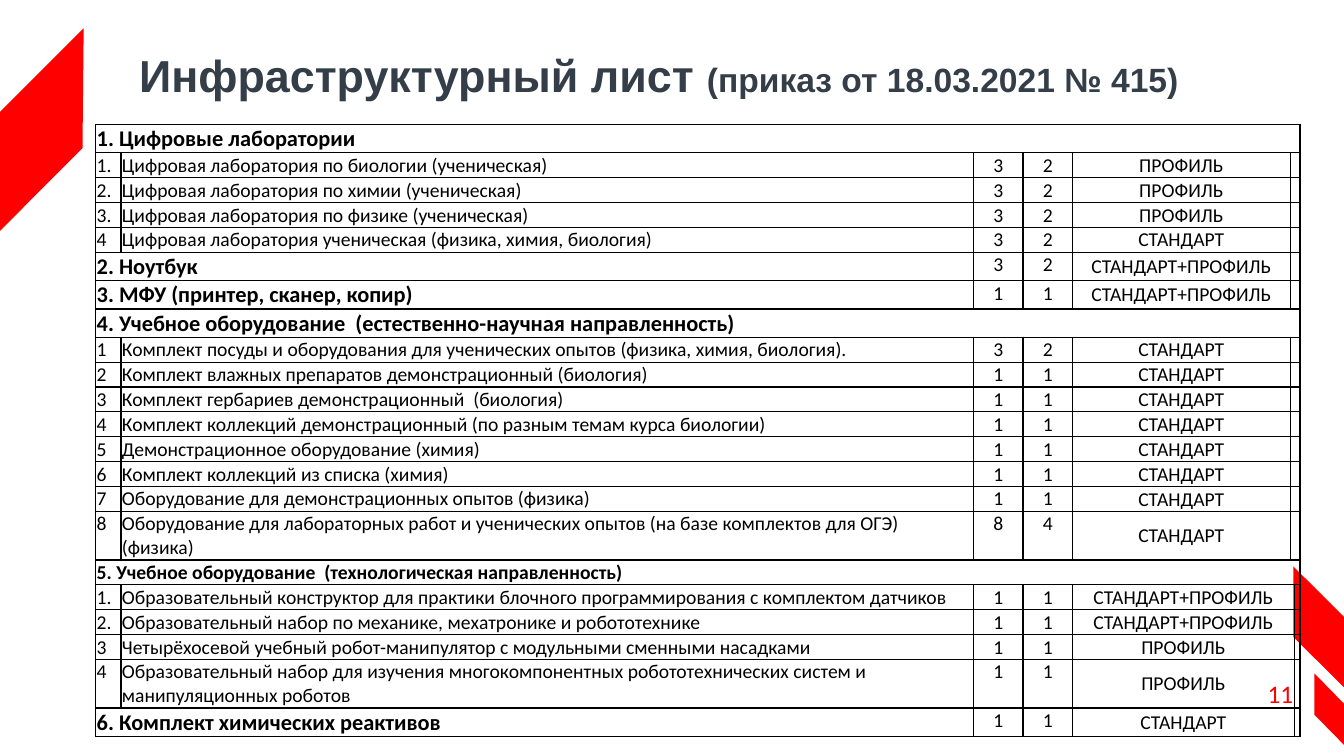
from lxml import etree
from pptx import Presentation
from pptx.dml.color import RGBColor
from pptx.enum.text import MSO_ANCHOR, MSO_AUTO_SIZE, PP_ALIGN
from pptx.oxml.ns import qn
from pptx.util import Pt

LEFT, CENTER, RIGHT = PP_ALIGN.LEFT, PP_ALIGN.CENTER, PP_ALIGN.RIGHT
TOP, MIDDLE = MSO_ANCHOR.TOP, MSO_ANCHOR.MIDDLE
NO_AUTOFIT = MSO_AUTO_SIZE.NONE
COLORS = {"red": "FF0000", "title": "333E48", "black": "000000"}

STANDARD, PROFILE = "СТАНДАРТ", "ПРОФИЛЬ"
BOTH = "СТАНДАРТ+ПРОФИЛЬ"
ROWS = [
    ("", "1. Цифровые лаборатории"),
    ("1.", "Цифровая лаборатория по биологии (ученическая)", 3, 2, PROFILE),
    ("2.", "Цифровая лаборатория по химии (ученическая)", 3, 2, PROFILE),
    ("3.", "Цифровая лаборатория по физике (ученическая)", 3, 2, PROFILE),
    ("4", "Цифровая лаборатория ученическая (физика, химия, биология)", 3, 2, STANDARD),
    ("", "2. Ноутбук", 3, 2, BOTH),
    ("", "3. МФУ (принтер, сканер, копир)", 1, 1, BOTH),
    ("", "4. Учебное оборудование  (естественно-научная направленность)"),
    ("1", "Комплект посуды и оборудования для ученических опытов (физика, химия, биология).", 3, 2, STANDARD),
    ("2", "Комплект влажных препаратов демонстрационный (биология)", 1, 1, STANDARD),
    ("3", "Комплект гербариев демонстрационный  (биология)", 1, 1, STANDARD),
    ("4", "Комплект коллекций демонстрационный (по разным темам курса биологии)", 1, 1, STANDARD),
    ("5", "Демонстрационное оборудование (химия)", 1, 1, STANDARD),
    ("6", "Комплект коллекций из списка (химия)", 1, 1, STANDARD),
    ("7", "Оборудование для демонстрационных опытов (физика)", 1, 1, STANDARD),
    ("8", "Оборудование для лабораторных работ и ученических опытов (на базе комплектов для ОГЭ) (физика)",
     8, 4, STANDARD),
    ("", "5. Учебное оборудование  (технологическая направленность)"),
    ("1.", "Образовательный конструктор для практики блочного программирования с комплектом датчиков", 1, 1, BOTH),
    ("2.", "Образовательный набор по механике, мехатронике и робототехнике", 1, 1, BOTH),
    ("3", "Четырёхосевой учебный робот-манипулятор с модульными сменными насадками", 1, 1, PROFILE),
    ("4", "Образовательный набор для изучения многокомпонентных робототехнических систем и "
     "манипуляционных роботов", 1, 1, PROFILE),
    ("", "6. Комплект химических реактивов", 1, 1, STANDARD),
]
TECH_ROW = 16
TWO_LINE_ROWS = (15, 20)
COLUMN_WIDTHS = (18, 609.1, 35.3, 35.3, 155.5, 2.9, 3.6)


class SlideBuilder:
    def __init__(self, prs):
        self.s = prs.slides.add_slide(prs.slide_layouts[5])

    def run(self, p, text, size, font="Calibri", color="black", bold=False):
        r = p.add_run()
        r.text = text
        r.font.size = Pt(size)
        r.font.name = font
        r.font.bold = bold
        r.font.color.rgb = RGBColor.from_string(COLORS[color])

    def frame(self, tf, anchor, align):
        tf.word_wrap = True
        tf.auto_size = NO_AUTOFIT
        tf.vertical_anchor = anchor
        tf.margin_left = tf.margin_right = tf.margin_top = tf.margin_bottom = Pt(3.6)
        tf.paragraphs[0].alignment = align
        return tf.paragraphs[0]

    def title(self, x, y, w, h, runs):
        sp = self.s.shapes.title
        sp.left, sp.top, sp.width, sp.height = Pt(x), Pt(y), Pt(w), Pt(h)
        p = self.frame(sp.text_frame, MIDDLE, LEFT)
        p.line_spacing = 0.9
        for text, size in runs:
            self.run(p, text, size, "Arial", "title", True)

    def text(self, x, y, w, h, text, size, color, align):
        sp = self.s.shapes.add_textbox(Pt(x), Pt(y), Pt(w), Pt(h))
        self.run(self.frame(sp.text_frame, TOP, align), text, size, color=color)

    def polygon(self, points, color):
        start, *rest = [(Pt(x), Pt(y)) for x, y in points]
        builder = self.s.shapes.build_freeform(*start)
        builder.add_line_segments(rest, close=True)
        sp = builder.convert_to_shape()
        sp.shadow.inherit = False
        sp.fill.solid()
        sp.fill.fore_color.rgb = RGBColor.from_string(COLORS[color])
        sp.line.fill.background()

    def table(self, x, y, widths, heights):
        frame = self.s.shapes.add_table(len(heights), len(widths), Pt(x), Pt(y),
                                        Pt(sum(widths)), Pt(sum(heights)))
        table = frame.table
        table.first_row = table.horz_banding = False
        for column, width in zip(table.columns, widths):
            column.width = Pt(width)
        for row, height in zip(table.rows, heights):
            row.height = Pt(height)
        for cell in table.iter_cells():
            self.cell_style(cell)
        return table

    def cell_style(self, cell):
        cell.margin_left = cell.margin_right = cell.margin_top = Pt(0.7)
        cell.margin_bottom = 0
        cell.fill.background()
        tc_pr = cell._tc.get_or_add_tcPr()
        for i, side in enumerate(("lnL", "lnR", "lnT", "lnB")):
            ln = etree.Element(qn(f"a:{side}"), w=str(Pt(1)))
            fill = etree.SubElement(ln, qn("a:solidFill"))
            etree.SubElement(fill, qn("a:srgbClr"), val=COLORS["black"])
            tc_pr.insert(i, ln)
        p = cell.text_frame.paragraphs[0]
        etree.SubElement(p._p, qn("a:endParaRPr"), sz="1400")

    def cell(self, cell, text, size=14, bold=False, align=LEFT, anchor=TOP):
        cell.vertical_anchor = anchor
        p = cell.text_frame.paragraphs[0]
        p.alignment = align
        self.run(p, text, size, bold=bold)


def row_size(i):
    return 14 if ROWS[i][0] or i == TECH_ROW else 16


def row_height(i):
    if i in TWO_LINE_ROWS:
        return 34.8
    return 17.7 if row_size(i) == 14 else 20.2


def fill_equipment(slide, table):
    for i, (number, name, *details) in enumerate(ROWS):
        cells = [table.cell(i, j) for j in range(len(COLUMN_WIDTHS))]
        if number:
            slide.cell(cells[0], number)
            slide.cell(cells[1], name)
        else:
            cells[0].merge(cells[1] if details else cells[-1])
            slide.cell(cells[0], name, row_size(i), True)
        if details:
            *amounts, level = details
            for cell, amount in zip(cells[2:4], amounts):
                slide.cell(cell, str(amount), align=CENTER)
            first = 5 if i < TECH_ROW else 4
            cells[first].merge(cells[first + 1])
            slide.cell(cells[4], level, align=CENTER, anchor=MIDDLE)


def main():
    prs = Presentation()
    prs.slide_width, prs.slide_height = Pt(960), Pt(540)
    slide = SlideBuilder(prs)
    slide.text(891.4, 481, 36, 28.8, "11", 18, "red", RIGHT)
    for points in (
        [(-0.7, 165.6), (0, 79.9), (59.8, 20.2), (59, 105.8)],
        [(960, 491), (923.8, 455), (923.8, 404.6), (960, 440.6)],
        [(960, 532), (938.9, 510.5), (938.9, 481), (960, 502.6)],
    ):
        slide.polygon(points, "red")
    slide.title(95.8, 19.4, 758.9, 72,
                [("Инфраструктурный лист ", 32), ("(приказ от 18.03.2021 № 415)", 24)])
    heights = [row_height(i) for i in range(len(ROWS))]
    fill_equipment(slide, slide.table(68.4, 88.9, COLUMN_WIDTHS, heights))
    prs.save("out.pptx")


if __name__ == "__main__":
    main()
